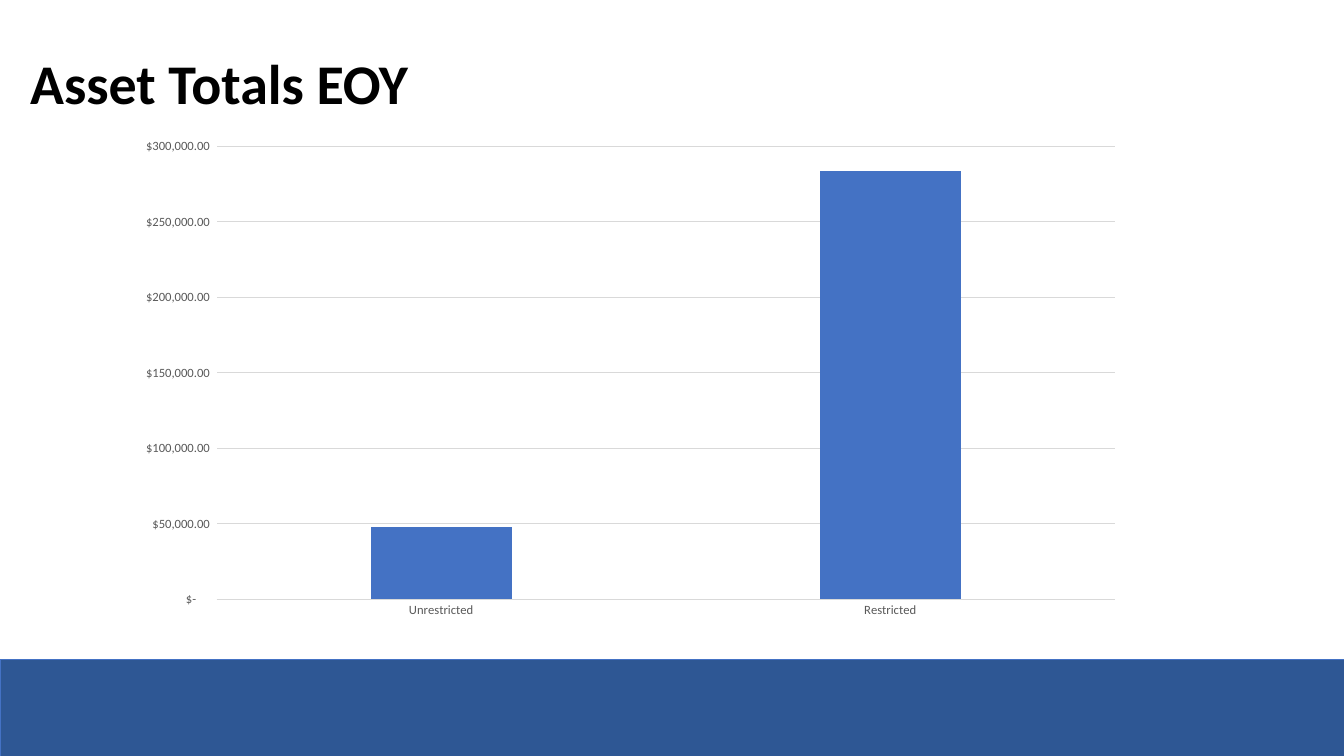
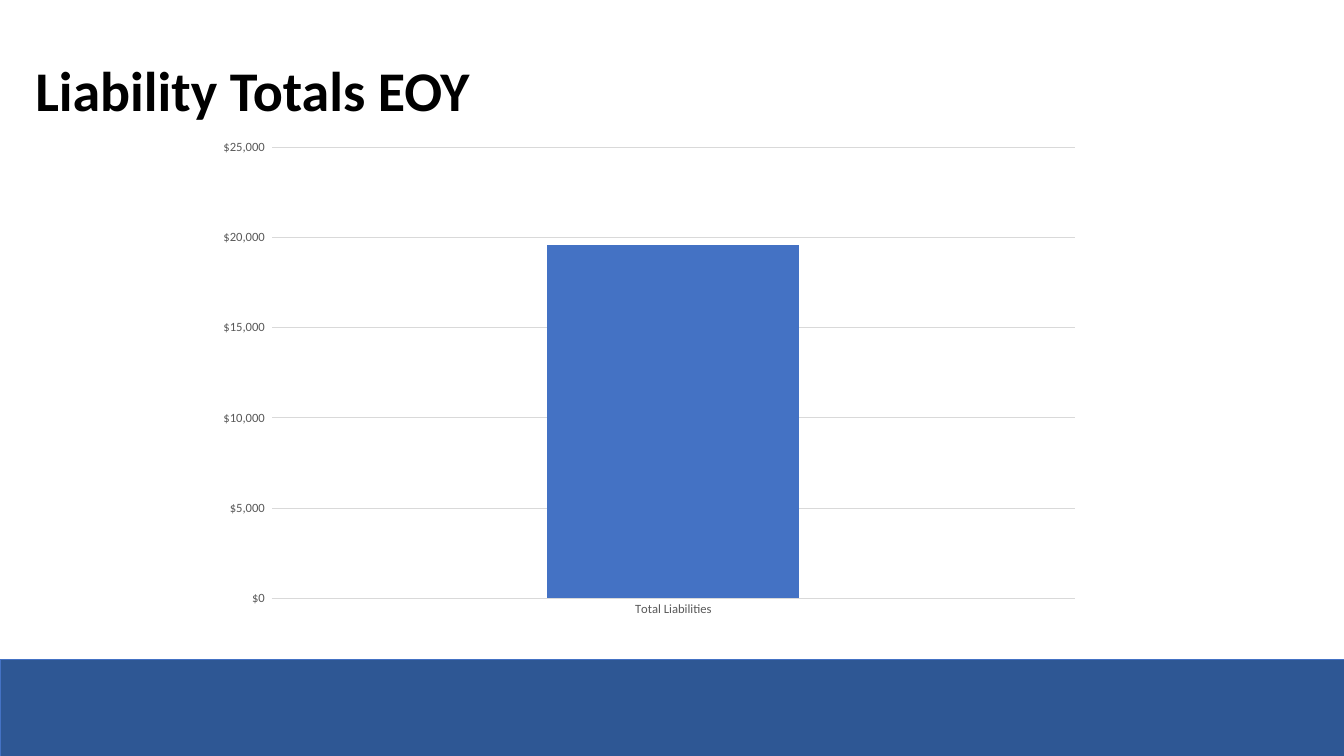
from pptx import Presentation
from pptx.chart.data import CategoryChartData
from pptx.dml.color import RGBColor
from pptx.enum.chart import XL_CHART_TYPE, XL_TICK_MARK
from pptx.enum.shapes import MSO_SHAPE
from pptx.enum.text import MSO_ANCHOR, MSO_AUTO_SIZE, PP_ALIGN
from pptx.util import Pt

COLUMNS = XL_CHART_TYPE.COLUMN_CLUSTERED
NO_TICKS = XL_TICK_MARK.NONE
RECTANGLE = MSO_SHAPE.RECTANGLE
MIDDLE = MSO_ANCHOR.MIDDLE
NO_AUTOFIT = MSO_AUTO_SIZE.NONE
LEFT = PP_ALIGN.LEFT

# Shared style
FONT = "Calibri"
BLACK, GRAY, GRID = "000000", "595959", "D9D9D9"
BLUE, BAND_BLUE = "4472C4", "2E5794"
SLIDE_WIDTH, SLIDE_HEIGHT = 960, 540
BAND_HEIGHT = 69.2
TITLE_WIDTH, TITLE_HEIGHT = 828, 104.4

# Slide content; positions in points
SLIDES = [
    {
        "title": "Asset Totals EOY",
        "title_position": (14.4, 9.4),
        "chart_box": (87.8, 92.2, 722.9, 356.4),
        "values": {"Unrestricted": 48000, "Restricted": 284000},
        "scale": (300000, 50000),
        "format": r'_("$"* #,##0.00_);_("$"* \(#,##0.00\);_("$"* "-"??_);_(@_)',
    },
    {
        "title": "Liability Totals EOY",
        "title_position": (18, 14.4),
        "chart_box": (146.9, 92.9, 633.6, 355),
        "values": {"Total Liabilities": 19600},
        "scale": (25000, 5000),
        "format": r'"$"#,##0_);[Red]\("$"#,##0\)',
    },
]


def color(hex_value):
    return RGBColor.from_string(hex_value)


def set_font(font, size, hex_value, bold=False):
    font.name = FONT
    font.size = Pt(size)
    font.bold = bold
    font.color.rgb = color(hex_value)


presentation = Presentation()
presentation.slide_width = Pt(SLIDE_WIDTH)
presentation.slide_height = Pt(SLIDE_HEIGHT)
title_only = presentation.slide_layouts[5]

for content in SLIDES:
    slide = presentation.slides.add_slide(title_only)

    # Title
    title = slide.shapes.title
    title.left, title.top = (Pt(value) for value in content["title_position"])
    title.width, title.height = Pt(TITLE_WIDTH), Pt(TITLE_HEIGHT)
    title.text_frame.text = content["title"]
    title.text_frame.auto_size = NO_AUTOFIT
    title.text_frame.vertical_anchor = MIDDLE
    paragraph = title.text_frame.paragraphs[0]
    paragraph.alignment = LEFT
    paragraph.line_spacing = 0.9
    set_font(paragraph.font, 40, BLACK, bold=True)

    # Bottom band
    band = slide.shapes.add_shape(
        RECTANGLE, 0, Pt(SLIDE_HEIGHT - BAND_HEIGHT), Pt(SLIDE_WIDTH), Pt(BAND_HEIGHT)
    )
    band.shadow.inherit = False
    band.fill.solid()
    band.fill.fore_color.rgb = color(BAND_BLUE)
    band.line.color.rgb = color(BLUE)
    band.line.width = Pt(0.5)

    # Column chart
    chart_data = CategoryChartData()
    chart_data.categories = list(content["values"])
    chart_data.add_series("Series 1", list(content["values"].values()))
    chart_box = [Pt(value) for value in content["chart_box"]]
    chart = slide.shapes.add_chart(COLUMNS, *chart_box, chart_data).chart
    chart.has_title = False
    chart.has_legend = False
    set_font(chart.font, 10, BLACK)

    plot = chart.plots[0]
    plot.vary_by_categories = False
    plot.gap_width = 219
    plot.overlap = -27
    series = plot.series[0]
    series.format.fill.solid()
    series.format.fill.fore_color.rgb = color(BLUE)

    # Axes and gridlines
    category_axis, value_axis = chart.category_axis, chart.value_axis
    for axis in (category_axis, value_axis):
        axis.major_tick_mark = NO_TICKS
        axis.minor_tick_mark = NO_TICKS
        set_font(axis.tick_labels.font, 9, GRAY)
    value_axis.has_major_gridlines = True
    for line in (category_axis.format.line, value_axis.major_gridlines.format.line):
        line.color.rgb = color(GRID)
        line.width = Pt(0.75)
    value_axis.format.line.fill.background()
    value_axis.minimum_scale = 0
    value_axis.maximum_scale, value_axis.major_unit = content["scale"]
    value_axis.tick_labels.number_format = content["format"]
    value_axis.tick_labels.number_format_is_linked = False

presentation.save("out.pptx")
